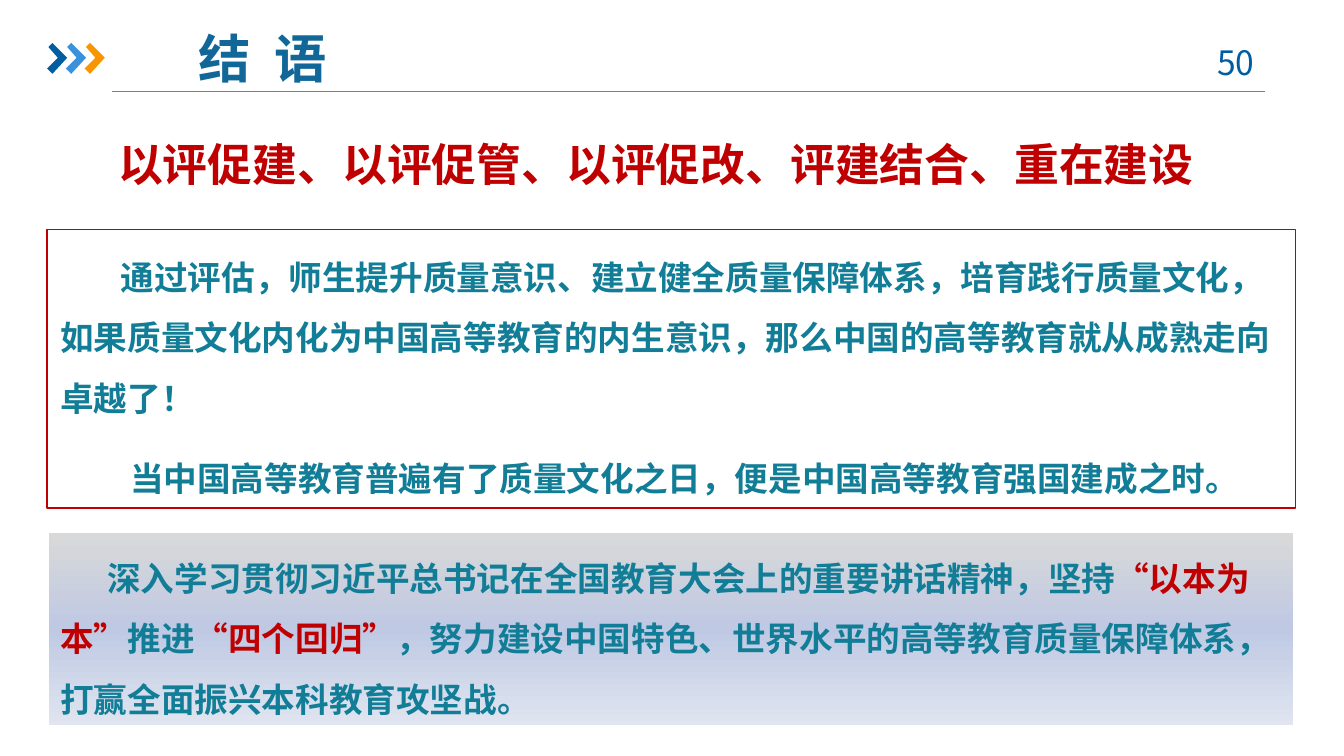
from lxml.etree import SubElement
from pptx import Presentation
from pptx.dml.color import RGBColor
from pptx.enum.shapes import MSO_CONNECTOR, MSO_SHAPE
from pptx.enum.text import MSO_ANCHOR, MSO_AUTO_SIZE, PP_ALIGN
from pptx.oxml.ns import qn
from pptx.util import Inches, Pt

COLORS = {
    "navy": "005DA2", "sky": "3992DB", "orange": "F79600", "gray": "808080",
    "title": "116797", "red": "C00000", "teal": "127D96", "white": "FFFFFF",
    "gradient_top": "D9D9D9", "gradient_middle": "BFC9E3", "gradient_bottom": "E0E5F0",
}
CJK = "Noto Sans CJK SC"


def rgb(name):
    return RGBColor.from_string(COLORS[name])


def write(shape, paragraphs, size=18, font=CJK, color="teal", bold=True,
          align=PP_ALIGN.LEFT, wrap=True):
    """Each paragraph is (line spacing, first-line indent in inches, [(text, color or None)])."""
    frame = shape.text_frame
    frame.word_wrap = wrap
    frame.auto_size = MSO_AUTO_SIZE.SHAPE_TO_FIT_TEXT
    frame.vertical_anchor = MSO_ANCHOR.TOP
    for index, (spacing, indent, runs) in enumerate(paragraphs):
        paragraph = frame.add_paragraph() if index else frame.paragraphs[0]
        paragraph.alignment = align
        paragraph.line_spacing = spacing
        if indent:
            paragraph._p.get_or_add_pPr().set("indent", str(Inches(indent)))
        for text, run_color in runs:
            run = paragraph.add_run()
            run.text = text
            run.font.size = Pt(size)
            run.font.bold = bold
            run.font.name = font
            run.font.color.rgb = rgb(run_color or color)
            SubElement(run._r.get_or_add_rPr(), qn("a:ea")).set("typeface", CJK)


presentation = Presentation()
presentation.slide_width = Inches(10)
presentation.slide_height = Inches(10 * 9 / 16)
slide = presentation.slides.add_slide(presentation.slide_layouts[6])
shapes = slide.shapes

# Header: rule, chevrons, page number and title
rule = shapes.add_connector(MSO_CONNECTOR.STRAIGHT, Inches(0.83), Inches(0.68),
                            Inches(9.41), Inches(0.68))
rule.line.color.rgb = rgb("gray")
rule.line.width = Pt(0.75)
SubElement(rule._element.spPr, qn("a:effectLst"))

chevron_points = [(0.01, 0.03), (0.04, 0), (0.15, 0.11), (0.04, 0.23), (0, 0.19), (0.08, 0.11)]
for index, color in enumerate(["navy", "sky", "orange"]):
    left = 0.35 + 0.14 * index
    points = [(Inches(left + x), Inches(0.32 + y)) for x, y in chevron_points]
    builder = shapes.build_freeform(*points[0])
    builder.add_line_segments(points[1:], close=True)
    chevron = builder.convert_to_shape()
    chevron.shadow.inherit = False
    chevron.fill.solid()
    chevron.fill.fore_color.rgb = rgb(color)
    chevron.line.fill.background()

page_number = shapes.add_textbox(Inches(8.86), Inches(0.26), Inches(0.73), Inches(0.4))
write(page_number, [(1, 0, [("50 ", None)])], color="navy", bold=False, align=PP_ALIGN.CENTER)

title = shapes.add_textbox(Inches(1.38), Inches(0.15), Inches(1.5), Inches(0.57))
write(title, [(1, 0, [("结  语", None)])], size=28, font="Arial", color="title", wrap=False)

slogan = shapes.add_textbox(Inches(0.35), Inches(0.77), Inches(9.06), Inches(0.71))
write(slogan, [(1.5, 0, [("以评促建、以评促管、以评促改、评建结合、重在建设", None)])],
      size=24, font="Calibri", color="red", align=PP_ALIGN.CENTER)

# Outlined box
quality_box = shapes.add_shape(MSO_SHAPE.RECTANGLE, Inches(0.35), Inches(1.71),
                               Inches(9.29), Inches(2.07))
quality_box.shadow.inherit = False
quality_box.fill.background()
quality_box.line.color.rgb = rgb("red")
quality_box.line.width = Pt(0.75)
write(quality_box, [
    (1.5, 0.45, [("通过评估，师生提升质量意识、建立健全质量保障体系，培育践行质量文化， "
                  "如果质量文化内化为中国高等教育的内生意识，"
                  "那么中国的高等教育就从成熟走向卓越了！", None)]),
    (2, 0.52, [("当中国高等教育普遍有了质量文化之日，便是中国高等教育强国建成之时。", None)]),
], font="Calibri")

# Gradient box
mission_box = shapes.add_shape(MSO_SHAPE.RECTANGLE, Inches(0.35), Inches(3.95),
                               Inches(9.29), Inches(1.46))
mission_box.shadow.inherit = False
mission_box.line.color.rgb = rgb("white")
mission_box.line.width = Pt(2.25)
mission_box.fill.gradient()
mission_box.fill.gradient_angle = 270
stop_list = mission_box._element.spPr.find(".//" + qn("a:gsLst"))
for stop in list(stop_list):
    stop_list.remove(stop)
for position, color in [(0, "gradient_top"), (50, "gradient_middle"), (100, "gradient_bottom")]:
    stop = SubElement(stop_list, qn("a:gs"), pos=str(position * 1000))
    SubElement(stop, qn("a:srgbClr"), val=COLORS[color])
write(mission_box, [(1.5, 0.35, [
    ("深入学习贯彻习近平总书记在全国教育大会上的重要讲话精神，坚持", None),
    ("“以本为本”", "red"),
    ("推进", None),
    ("“四个回归”", "red"),
    ("，努力建设中国特色、世界水平的高等教育质量保障体系，打赢全面振兴本科教育攻坚战。", None),
])])

presentation.save("out.pptx")
